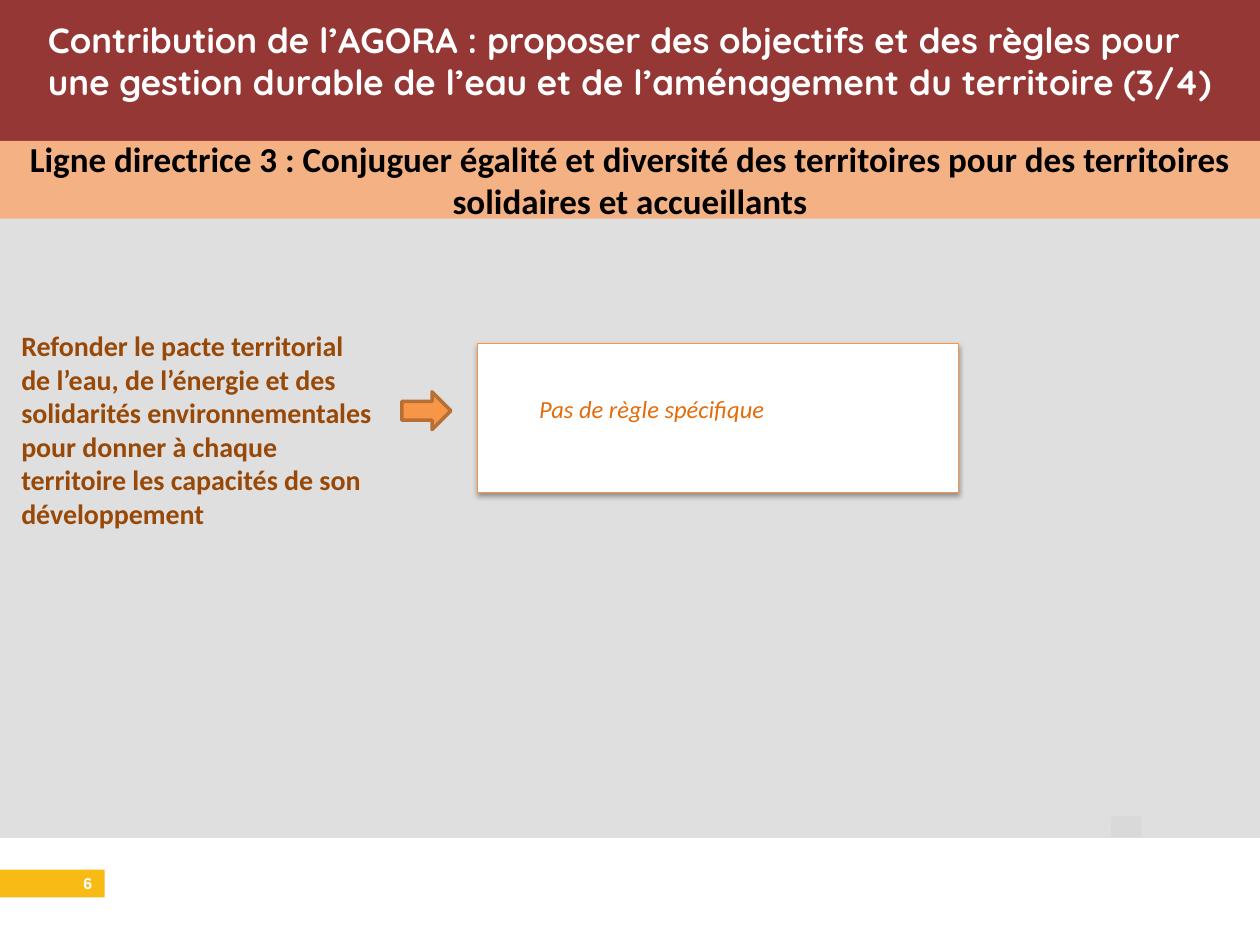
from lxml.etree import SubElement
from pptx import Presentation
from pptx.dml.color import RGBColor
from pptx.enum.shapes import MSO_SHAPE
from pptx.enum.text import MSO_ANCHOR, MSO_AUTO_SIZE, PP_ALIGN
from pptx.oxml.ns import qn
from pptx.util import Cm, Pt

COLORS = {
    "ground": "DFDFDF",
    "band": "953735",
    "guideline": "F4B183",
    "tab": "F8BB16",
    "chip": "D9D9D9",
    "white": "FFFFFF",
    "black": "000000",
    "orange": "F79646",
    "arrow_edge": "B76F34",
    "rule": "E46C0A",
    "objective": "984807",
}
WIDTH, HEIGHT = 25.4, 19.05


def rgb(name):
    return RGBColor.from_string(COLORS[name])


def lengths(box):
    return [Cm(round(value, 2)) for value in box]


def add_block(slide, box, fill, edge=None, edge_width=0.75, kind=MSO_SHAPE.RECTANGLE):
    block = slide.shapes.add_shape(kind, *lengths(box))
    block.shadow.inherit = False
    block.fill.solid()
    block.fill.fore_color.rgb = rgb(fill)
    if edge:
        block.line.color.rgb = rgb(edge)
        block.line.width = Pt(edge_width)
    else:
        block.line.fill.background()
    return block


def write(frame, text, size, color, font="Calibri", bold=False, italic=False,
          align=PP_ALIGN.LEFT, anchor=MSO_ANCHOR.TOP):
    frame.word_wrap = True
    frame.auto_size = MSO_AUTO_SIZE.NONE
    frame.vertical_anchor = anchor
    paragraph = frame.paragraphs[0]
    paragraph.alignment = align
    run = paragraph.add_run()
    run.text = text
    run.font.name = font
    run.font.size = Pt(size)
    run.font.bold = bold
    run.font.italic = italic
    run.font.color.rgb = rgb(color)


def add_text(slide, box, text, size, color, **style):
    caption = slide.shapes.add_textbox(*lengths(box))
    write(caption.text_frame, text, size, color, **style)


def add_drop_shadow(block):
    effects = block._element.spPr.find(qn("a:effectLst"))
    shadow = SubElement(effects, qn("a:outerShdw"), blurRad=str(Pt(3.1)),
                        dist=str(Pt(1.8)), dir="5400000", rotWithShape="0")
    tint = SubElement(shadow, qn("a:srgbClr"), val=COLORS["black"])
    SubElement(tint, qn("a:alpha"), val="35000")


def build_header(slide, left, top, width, height):
    add_block(slide, (left, top, width, height), "band")
    title = slide.shapes.title
    title.left, title.top, title.width, title.height = lengths(
        (left + 0.71, top + 0.43, width - 1.35, 2.16))
    write(title.text_frame,
          "Contribution de l’AGORA : proposer des objectifs et des règles pour "
          "une gestion durable de l’eau et de l’aménagement du territoire (3/4)",
          20, "white", font="Quicksand", bold=True)
    title._element.getparent().append(title._element)


def build_guideline(slide, *box):
    guideline = add_block(slide, box, "guideline")
    write(guideline.text_frame,
          "Ligne directrice 3 : Conjuguer égalité et diversité des territoires "
          "pour des territoires solidaires et accueillants",
          20, "black", bold=True, align=PP_ALIGN.CENTER, anchor=MSO_ANCHOR.MIDDLE)


def build_objective(slide, left, top, height):
    add_text(slide, (left, top, 7.59, height),
             "Refonder le pacte territorial de l’eau, de l’énergie et des "
             "solidarités environnementales pour donner à chaque territoire "
             "les capacités de son développement",
             16, "objective", bold=True)
    add_block(slide, (left + 7.92, top + 1.4, 0.99, 0.76), "orange",
              "arrow_edge", 2, MSO_SHAPE.RIGHT_ARROW)
    rule_card = add_block(slide, (left + 9.45, top + 0.43, 9.7, 3), "white", "orange")
    add_drop_shadow(rule_card)
    add_text(slide, (left + 10.44, top + 1.32, 9.47, 0.86),
             "Pas de règle spécifique", 14, "rule", italic=True)


def build_page_tab(slide, *box):
    tab = add_block(slide, box, "tab")
    write(tab.text_frame, "6", 9, "white", font="Arial", bold=True,
          align=PP_ALIGN.RIGHT, anchor=MSO_ANCHOR.MIDDLE)


def main():
    deck = Presentation()
    deck.slide_width, deck.slide_height = Cm(WIDTH), Cm(HEIGHT)
    slide = deck.slides.add_slide(deck.slide_layouts[5])
    add_block(slide, (0, 0, WIDTH, 16.89), "ground")
    build_page_tab(slide, 0, 17.53, 2.11, 0.56)
    add_block(slide, (22.4, 16.46, 0.61, 0.41), "chip")
    build_header(slide, 0, -0.18, WIDTH, 3.63)
    build_guideline(slide, 0, 2.84, WIDTH, 1.57)
    build_objective(slide, 0.18, 6.5, 4.37)
    deck.save("out.pptx")


if __name__ == "__main__":
    main()
